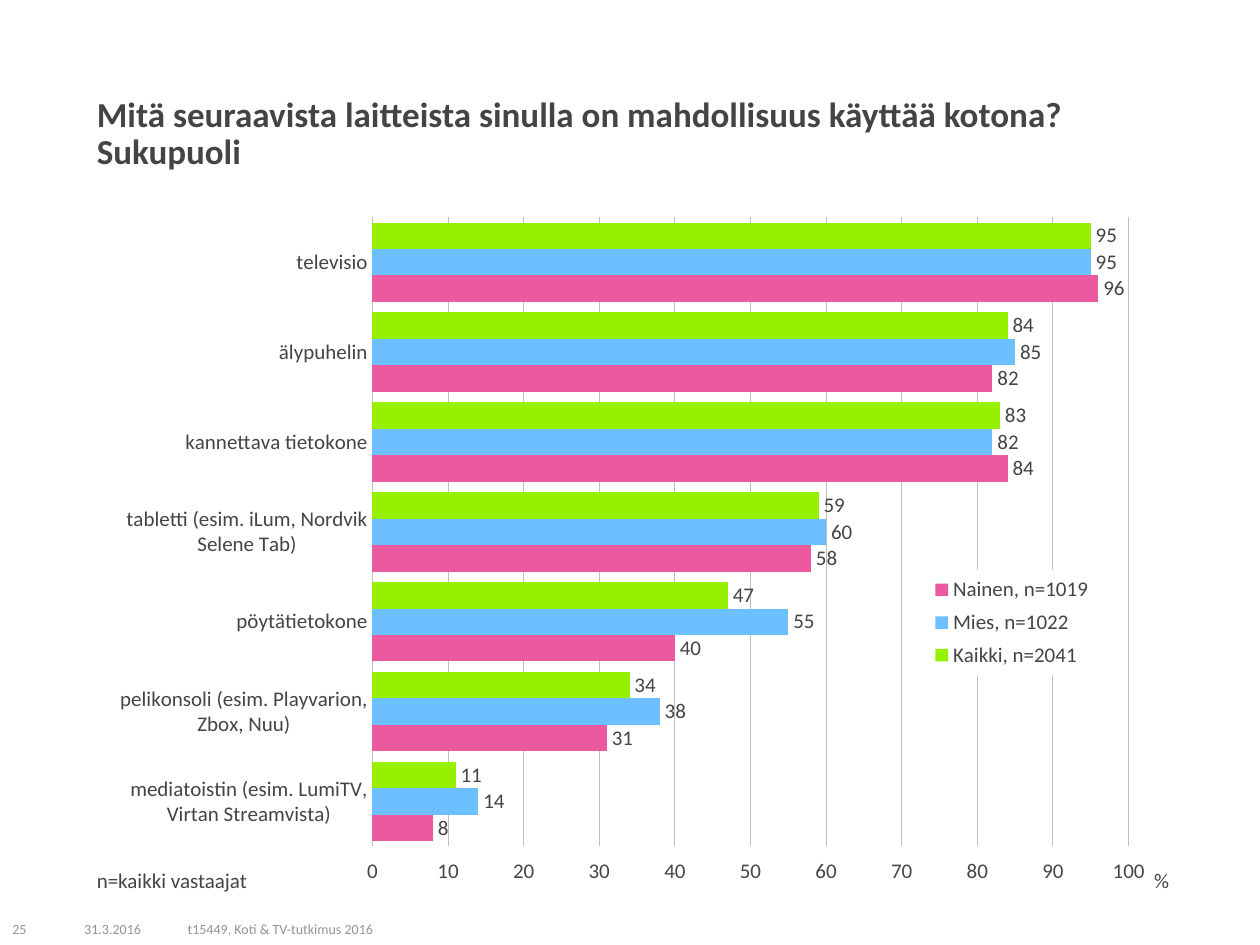
from lxml import etree
from pptx import Presentation
from pptx.chart.data import CategoryChartData
from pptx.dml.color import RGBColor
from pptx.enum.chart import (XL_CHART_TYPE as ChartType, XL_LABEL_POSITION as LabelPos,
                             XL_LEGEND_POSITION as LegendPos, XL_TICK_MARK as TickMark,
                             XL_TICK_LABEL_POSITION as TickLabelPos)
from pptx.enum.text import MSO_ANCHOR as Anchor
from pptx.oxml import parse_xml
from pptx.oxml.ns import nsdecls, qn
from pptx.util import Inches, Pt

FONT = "Calibri"
INK, MUTED, GRID = "444444", "939393", "BFBFBF"
DEVICES = [
    "televisio", "älypuhelin", "kannettava tietokone",
    "tabletti (esim. iLum, Nordvik Selene Tab)", "pöytätietokone",
    "pelikonsoli (esim. Playvarion, Zbox, Nuu)",
    "mediatoistin (esim. LumiTV, Virtan Streamvista)",
]
GROUPS = [
    ("Kaikki, n=2041", "96F000", (95, 84, 83, 59, 47, 34, 11)),
    ("Mies, n=1022", "6DC0FF", (95, 85, 82, 60, 55, 38, 14)),
    ("Nainen, n=1019", "EB599E", (96, 82, 84, 58, 40, 31, 8)),
]


def rgb(value):
    return RGBColor.from_string(value)


def style(font, size=12, color=INK, bold=False):
    font.name, font.size, font.bold = FONT, Pt(size), bold
    font.color.rgb = rgb(color)


def add_text(slide, text, left, top, width, height, anchor=Anchor.TOP,
             spacing=None, **font_format):
    box = slide.shapes.add_textbox(Inches(left), Inches(top), Inches(width), Inches(height))
    frame = box.text_frame
    frame.word_wrap, frame.vertical_anchor = True, anchor
    frame.text = text
    for paragraph in frame.paragraphs:
        if spacing:
            paragraph.line_spacing = spacing
        for run in paragraph.runs:
            style(run.font, **font_format)


def set_layout(element, index, inner=False, **fractions):
    """Place a chart part by fractions of the chart area."""
    for old in element.findall(qn("c:layout")):
        element.remove(old)
    layout = parse_xml(f"<c:layout {nsdecls('c')}><c:manualLayout/></c:layout>")
    settings = [("layoutTarget", "inner")] if inner else []
    settings += [("xMode", "edge"), ("yMode", "edge"), *fractions.items()]
    for name, value in settings:
        etree.SubElement(layout[0], qn(f"c:{name}")).set("val", str(value))
    element.insert(index, layout)


def style_axes(chart):
    devices, percent = chart.category_axis, chart.value_axis
    for axis in (devices, percent):
        axis.major_tick_mark = axis.minor_tick_mark = TickMark.NONE
        axis.format.line.fill.background()
        style(axis.tick_labels.font)
    devices.reverse_order = True
    devices.has_major_gridlines = False
    percent.tick_label_position = TickLabelPos.HIGH
    percent.minimum_scale, percent.maximum_scale, percent.major_unit = 0, 100, 10
    grid = percent.major_gridlines.format.line
    grid.color.rgb, grid.width = rgb(GRID), Pt(0.5)
    unit = percent.axis_title
    unit.text_frame.text = "%"
    style(unit.text_frame.paragraphs[0].runs[0].font)
    set_layout(unit._element, 1, x=0.977, y=0.955)


def style_legend(chart):
    chart.has_legend = True
    legend = chart.legend
    legend.position, legend.include_in_layout = LegendPos.RIGHT, False
    style(legend.font)
    set_layout(legend._element, 1, x=0.765, y=0.527, w=0.17, h=0.155)
    legend._element.find(qn("c:overlay")).addnext(parse_xml(
        f'<c:spPr {nsdecls("c", "a")}><a:solidFill><a:srgbClr val="FFFFFF"/></a:solidFill>'
        '<a:ln><a:noFill/></a:ln></c:spPr>'))


def add_device_chart(slide, left, top, width, height):
    data = CategoryChartData()
    data.categories = DEVICES
    for name, _, shares in GROUPS:
        data.add_series(name, shares)
    chart = slide.shapes.add_chart(ChartType.BAR_CLUSTERED, Inches(left), Inches(top),
                                   Inches(width), Inches(height), data).chart
    chart.has_title = False
    style(chart.font)
    plot = chart.plots[0]
    plot.gap_width, plot.overlap, plot.vary_by_categories = 40, 0, False
    for series, (_, color, _) in zip(plot.series, GROUPS):
        series.format.fill.solid()
        series.format.fill.fore_color.rgb = rgb(color)
        labels = series.data_labels
        labels.show_value, labels.position = True, LabelPos.OUTSIDE_END
        labels.number_format, labels.number_format_is_linked = "#,##0", False
        style(labels.font)
    style_axes(chart)
    style_legend(chart)
    plot_area = chart._chartSpace.find(".//" + qn("c:plotArea"))
    set_layout(plot_area, 0, inner=True, x=0.264, y=0.012, w=0.693, h=0.92)


def add_footer(slide, left, top, height):
    for text, offset, width in (("25", 0, 0.45), ("31.3.2016", 0.57, 0.82),
                                ("t15449, Koti & TV-tutkimus 2016", 1.39, 3.31)):
        add_text(slide, text, left + offset, top, width, height,
                 anchor=Anchor.MIDDLE, size=8, color=MUTED)


def main():
    deck = Presentation()
    deck.slide_width, deck.slide_height = Inches(10), Inches(7.5)
    slide = deck.slides.add_slide(deck.slide_layouts[6])
    margin, content_width = 0.67, 8.66
    add_footer(slide, 0, 7.25, 0.25)
    add_device_chart(slide, margin, 1.66, content_width, 5.48)
    add_text(slide, "Mitä seuraavista laitteista sinulla on mahdollisuus käyttää kotona?\nSukupuoli",
             margin, 0.72, content_width, 0.63, spacing=0.9, size=20, bold=True)
    add_text(slide, "n=kaikki vastaajat", margin, 6.86, 1.96, 0.28, spacing=0.9)
    deck.save("out.pptx")


if __name__ == "__main__":
    main()
